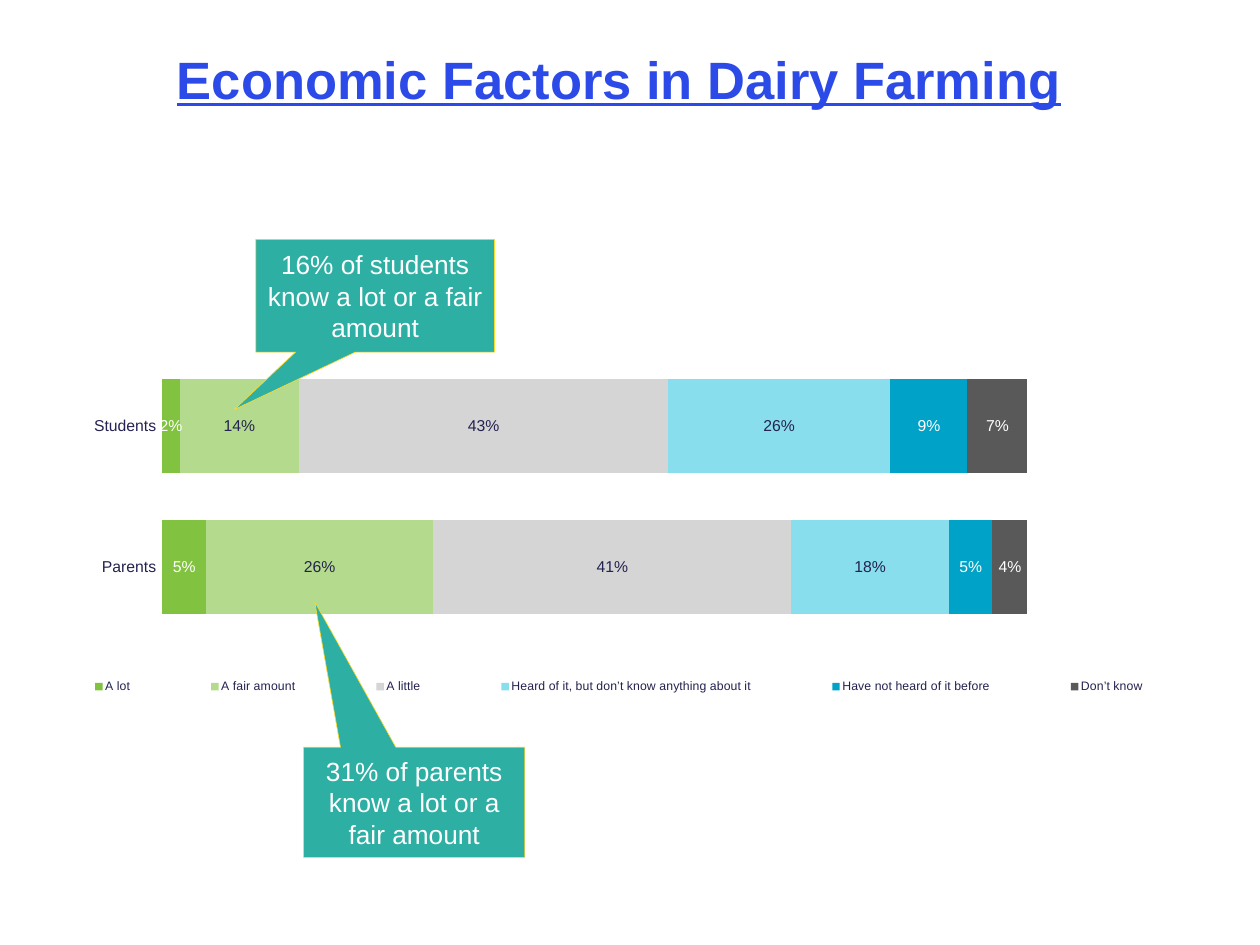
import pptx
import pptx.chart.data
import pptx.dml.color
import pptx.enum.chart
import pptx.enum.shapes
import pptx.enum.text
import pptx.oxml
import pptx.oxml.ns
import pptx.util

SLIDE_W, SLIDE_H = pptx.util.Inches(20), pptx.util.Inches(15)
COL, ROW = SLIDE_W / 100, SLIDE_H / 100
FONT = "Arial"
NAVY, WHITE, BLUE, TEAL, YELLOW = "242250", "FFFFFF", "2B4AE7", "2EAFA4", "FEDA2A"

GROUPS = ["Students", "Parents"]
ANSWERS = [
    ("A lot", (0.02, 0.05), "81C340", WHITE),
    ("A fair amount", (0.14, 0.26), "B4DB8D", NAVY),
    ("A little", (0.43, 0.41), "D5D5D5", NAVY),
    ("Heard of it, but don’t know anything about it", (0.26, 0.18), "88DEEC", NAVY),
    ("Have not heard of it before", (0.09, 0.05), "00A3C7", WHITE),
    ("Don’t know", (0.07, 0.04), "595959", WHITE),
]


def color(value):
    return pptx.dml.color.RGBColor.from_string(value)


def grid(box):
    left, top, width, height = box
    return int(left * COL), int(top * ROW), int(width * COL), int(height * ROW)


def set_font(font, size, value):
    font.name = FONT
    font.size = pptx.util.Pt(size)
    font.color.rgb = color(value)


def chart_layout(box, inner=False):
    target = '<c:layoutTarget val="inner"/>' if inner else ""
    modes = "".join(f'<c:{k}Mode val="edge"/>' for k in "xy")
    sizes = "".join(f'<c:{k} val="{v}"/>' for k, v in zip("xywh", box))
    return pptx.oxml.parse_xml(
        f'<c:layout {pptx.oxml.ns.nsdecls("c")}><c:manualLayout>'
        f"{target}{modes}{sizes}</c:manualLayout></c:layout>"
    )


def add_title(s, box, text):
    title = s.shapes.title
    title.left, title.top, title.width, title.height = grid(box)
    tf = title.text_frame
    tf.text = text
    tf.word_wrap = True
    tf.auto_size = pptx.enum.text.MSO_AUTO_SIZE.NONE
    tf.vertical_anchor = pptx.enum.text.MSO_ANCHOR.TOP
    p = tf.paragraphs[0]
    p.alignment = pptx.enum.text.PP_ALIGN.CENTER
    set_font(p.font, 60, BLUE)
    p.font.bold = True
    p.font.underline = True


def add_awareness_chart(s, box):
    data = pptx.chart.data.CategoryChartData(number_format="0%")
    data.categories = GROUPS
    for name, values, _, _ in ANSWERS:
        data.add_series(name, values)
    kind = pptx.enum.chart.XL_CHART_TYPE.BAR_STACKED_100
    chart = s.shapes.add_chart(kind, *grid(box), data).chart
    chart.has_title = False
    set_font(chart.font, 10, NAVY)

    plot = chart.plots[0]
    plot.gap_width = 50
    plot.overlap = 100
    plot.vary_by_categories = False
    for series, (_, _, fill, text) in zip(plot.series, ANSWERS):
        series.format.fill.solid()
        series.format.fill.fore_color.rgb = color(fill)
        labels = series.data_labels
        labels.show_value = True
        labels.number_format = "0%"
        labels.number_format_is_linked = False
        labels.position = pptx.enum.chart.XL_LABEL_POSITION.CENTER
        set_font(labels.font, 18, text)

    axis = chart.category_axis
    axis.reverse_order = True
    axis.major_tick_mark = pptx.enum.chart.XL_TICK_MARK.OUTSIDE
    axis.format.line.fill.background()
    set_font(axis.tick_labels.font, 18, NAVY)
    chart.value_axis.visible = False
    chart.value_axis.has_major_gridlines = False
    chart.value_axis.maximum_scale = 1

    area = chart.element.chart.plotArea
    for old in area.findall(pptx.oxml.ns.qn("c:layout")):
        area.remove(old)
    area.insert(0, chart_layout((0.12, 0.07, 0.72, 0.655), inner=True))

    chart.has_legend = True
    legend = chart.legend
    legend.position = pptx.enum.chart.XL_LEGEND_POSITION.RIGHT
    legend.include_in_layout = False
    set_font(legend.font, 14, NAVY)
    node = chart.element.chart.find(pptx.oxml.ns.qn("c:legend"))
    for old in node.findall(pptx.oxml.ns.qn("c:layout")):
        node.remove(old)
    node.insert(1, chart_layout((0, 0.8, 1, 0.08)))


def add_callout(s, box, tip, text):
    kind = pptx.enum.shapes.MSO_SHAPE.RECTANGULAR_CALLOUT
    sp = s.shapes.add_shape(kind, *grid(box))
    sp.adjustments[0], sp.adjustments[1] = tip
    sp.shadow.inherit = False
    sp.fill.solid()
    sp.fill.fore_color.rgb = color(TEAL)
    sp.line.color.rgb = color(YELLOW)
    sp.line.width = pptx.util.Pt(0.75)
    tf = sp.text_frame
    tf.text = text
    tf.word_wrap = True
    tf.vertical_anchor = pptx.enum.text.MSO_ANCHOR.MIDDLE
    p = tf.paragraphs[0]
    p.alignment = pptx.enum.text.PP_ALIGN.CENTER
    set_font(p.font, 30, WHITE)


def main():
    prs = pptx.Presentation()
    prs.slide_width, prs.slide_height = SLIDE_W, SLIDE_H
    s = prs.slides.add_slide(prs.slide_layouts[5])
    add_title(s, (3.4, 4.6, 91.45, 7.4), "Economic Factors in Dairy Farming")
    add_awareness_chart(s, (1.45, 34.47, 95.35, 45.47))
    add_callout(s, (24.1, 79.07, 17.55, 11.67), (-0.45, -1.82),
                "31% of parents know a lot or a fair amount")
    add_callout(s, (20.3, 25.33, 18.95, 11.93), (-0.59, 1.01),
                "16% of students know a lot or a fair amount")
    prs.save("out.pptx")


if __name__ == "__main__":
    main()
